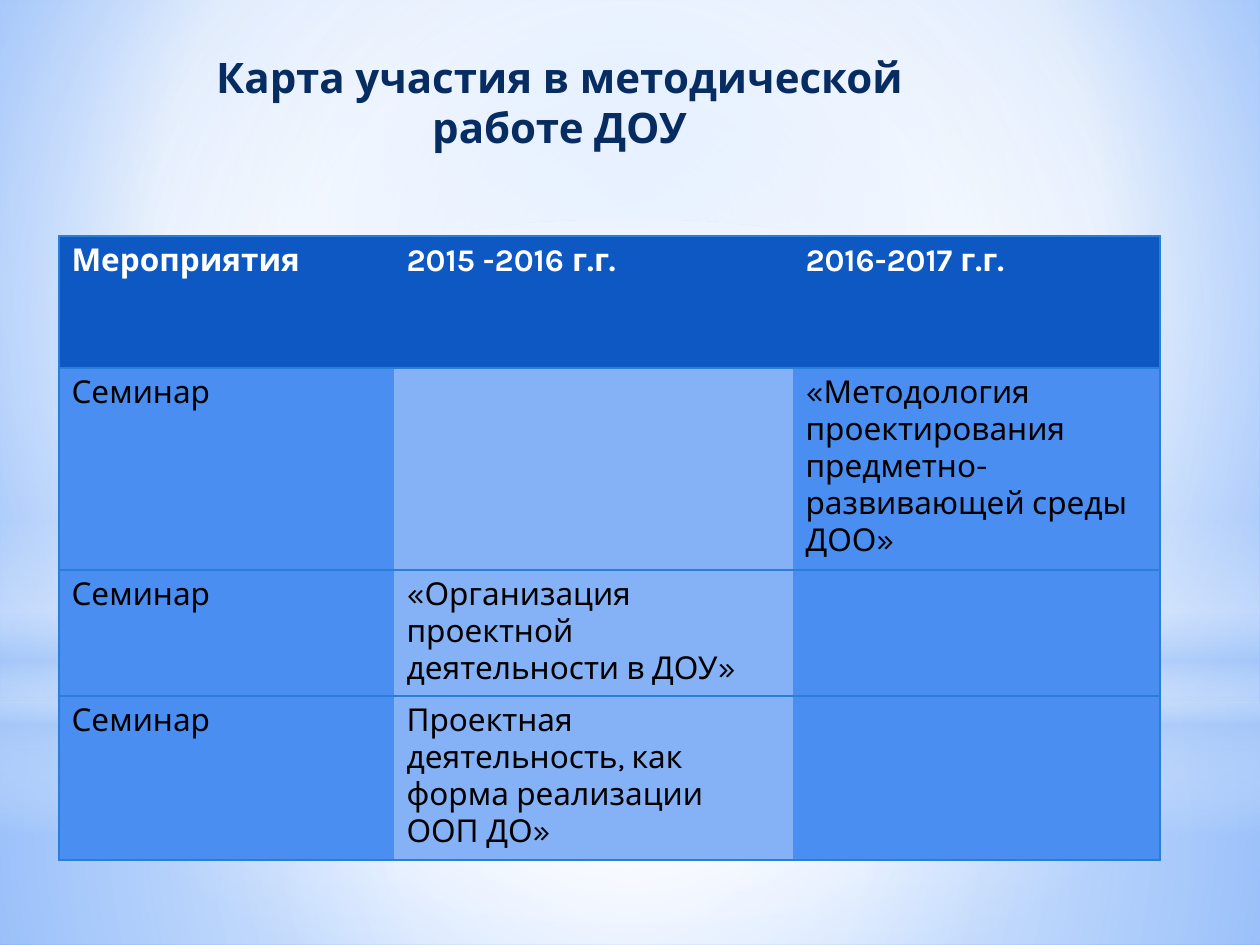
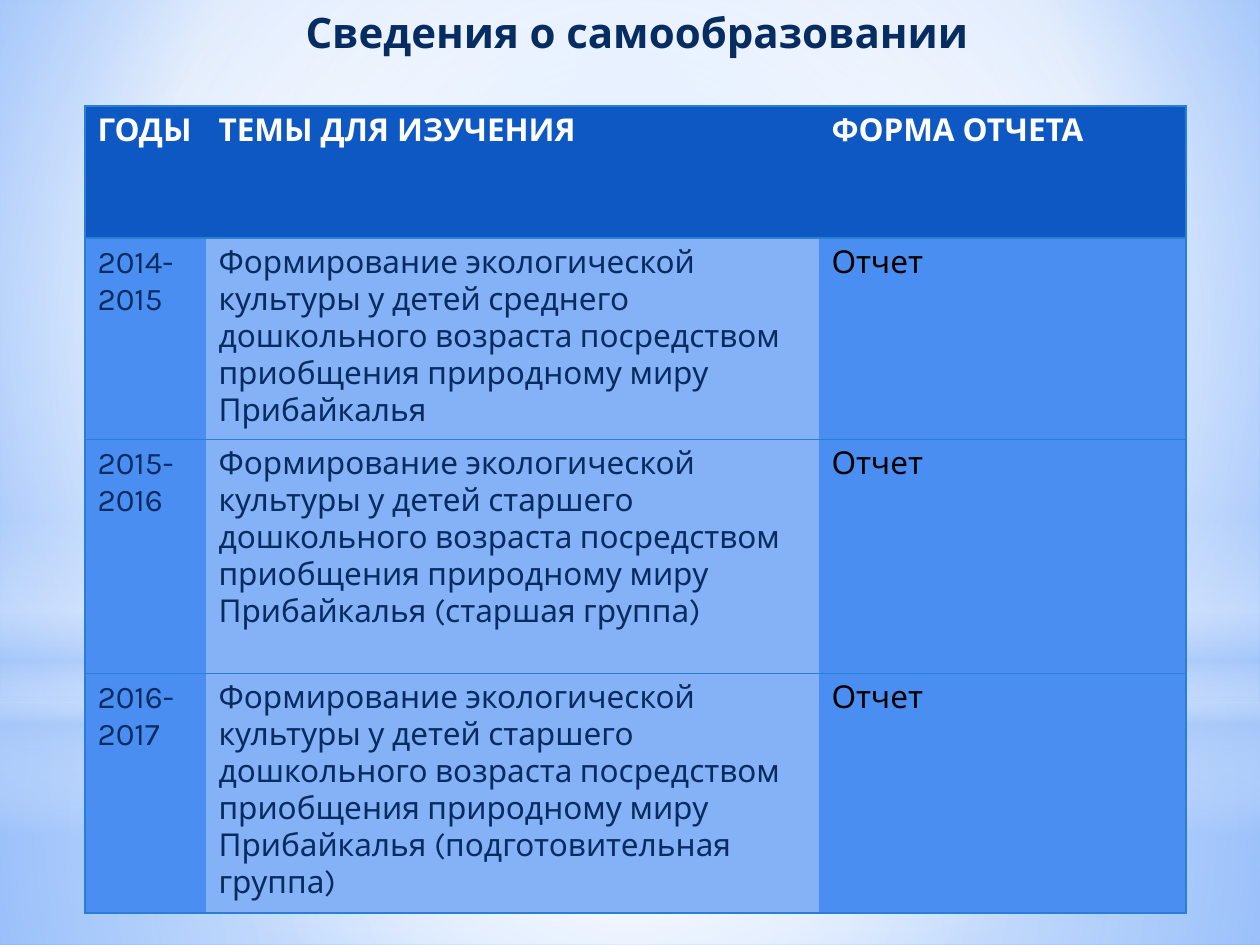
from dataclasses import dataclass

from lxml.etree import SubElement
from pptx import Presentation
from pptx.dml.color import RGBColor
from pptx.enum.shapes import MSO_SHAPE as Preset
from pptx.enum.text import PP_ALIGN as Align
from pptx.oxml import parse_xml
from pptx.oxml.ns import nsdecls, qn
from pptx.util import Emu, Pt


@dataclass(frozen=True)
class Theme:
    font: str = "Karla"
    title_size: int = 24
    cell_size: int = 18
    navy: str = "072C62"
    black: str = "000000"
    white: str = "FFFFFF"
    header: str = "0E58C4"
    blue: str = "4A8EF2"
    light_blue: str = "85B2F6"
    border: str = "297FD5"
    glow: str = "ACCBF9"
    sky: str = "95C0FF"
    deep_sky: str = "5599FF"


THEME = Theme()
EMU_PER_PX = 914400 / 126
WIDTH, HEIGHT = 1260, 945
CENTRE = (50, 50, 50, 50)
BACKGROUND = [(0, THEME.sky, 100), (60, THEME.white, 100), (100, THEME.deep_sky, 100)]
BANDS = [
    (Preset.RECTANGLE, 703, 242, CENTRE,
     [(0, THEME.white, 91), (37, THEME.white, 76), (100, THEME.glow, 79)]),
    (Preset.RECTANGLE, 0, 703, CENTRE,
     [(0, THEME.white, 89), (48, THEME.white, 62), (100, THEME.glow, 79)]),
    (Preset.RECTANGLE, 519, 315, None,
     [(0, THEME.white, 0), (29, THEME.white, 30), (45, THEME.glow, 40),
      (55, THEME.white, 26), (65, THEME.glow, 60), (100, THEME.white, 0)]),
    (Preset.OVAL, 220, 703, CENTRE,
     [(0, THEME.white, 100), (56, THEME.white, 0)]),
]


def px(value):
    return Emu(round(value * EMU_PER_PX))


def set_gradient(owner, stops, focus):
    owner.fill.gradient()
    gradient = owner.element.find(".//" + qn("a:gradFill"))
    for child in list(gradient):
        gradient.remove(child)
    stop_list = SubElement(gradient, qn("a:gsLst"))
    for position, color, alpha in stops:
        stop = SubElement(stop_list, qn("a:gs"), pos=str(position * 1000))
        tint = SubElement(stop, qn("a:srgbClr"), val=color)
        SubElement(tint, qn("a:alpha"), val=str(alpha * 1000))
    if focus:
        path = SubElement(gradient, qn("a:path"), {"path": "circle"})
        edges = {side: str(part * 1000) for side, part in zip("ltrb", focus)}
        SubElement(path, qn("a:fillToRect"), edges)
    else:
        SubElement(gradient, qn("a:lin"), ang="5400000", scaled="0")


@dataclass
class Backdrop:
    fill: object
    element: object


class Deck:
    def __init__(self, theme):
        self.theme = theme
        self.presentation = Presentation()
        self.presentation.slide_width = px(WIDTH)
        self.presentation.slide_height = px(HEIGHT)
        self.slide = None

    def new_slide(self):
        self.slide = self.presentation.slides.add_slide(self.presentation.slide_layouts[6])
        backdrop = Backdrop(self.slide.background.fill, self.slide.element)
        set_gradient(backdrop, BACKGROUND, (20, 10, 20, 60))
        for band in BANDS:
            self.band(*band)

    def band(self, preset, top, height, focus, stops):
        shape = self.slide.shapes.add_shape(preset, 0, px(top), px(WIDTH), px(height))
        shape.shadow.inherit = False
        shape.line.fill.background()
        set_gradient(Backdrop(shape.fill, shape.element), stops, focus)

    def run(self, paragraph, text, size, color, bold):
        run = paragraph.add_run()
        run.text = text
        run.font.name = self.theme.font
        run.font.size = Pt(size)
        run.font.bold = bold
        run.font.color.rgb = RGBColor.from_string(color)

    def title(self, text, left, top, width, height):
        box = self.slide.shapes.add_textbox(px(left), px(top), px(width), px(height))
        box.text_frame.word_wrap = True
        paragraph = box.text_frame.paragraphs[0]
        paragraph.alignment = Align.CENTER
        self.run(paragraph, text, self.theme.title_size, self.theme.navy, True)

    def borders(self, cell, first, last):
        visible = {"L": first, "R": last, "T": True, "B": True}
        properties = cell._tc.get_or_add_tcPr()
        for index, (side, shown) in enumerate(visible.items()):
            paint = (f'<a:solidFill><a:srgbClr val="{self.theme.border}"/></a:solidFill>'
                     if shown else "<a:noFill/>")
            line = f'<a:ln{side} {nsdecls("a")} w="12700">{paint}</a:ln{side}>'
            properties.insert(index, parse_xml(line))

    def table(self, left, top, widths, heights, text_colors, rows):
        frame = self.slide.shapes.add_table(
            len(rows), len(widths), px(left), px(top), px(sum(widths)), px(sum(heights)))
        table = frame.table
        for column, width in zip(table.columns, widths):
            column.width = px(width)
        for row, height in zip(table.rows, heights):
            row.height = px(height)
        fills = (self.theme.blue, self.theme.light_blue, self.theme.blue)
        for row_index, row in enumerate(rows):
            heading = row_index == 0
            for column_index, text in enumerate(row):
                cell = table.cell(row_index, column_index)
                cell.fill.solid()
                fill = self.theme.header if heading else fills[column_index]
                cell.fill.fore_color.rgb = RGBColor.from_string(fill)
                self.borders(cell, column_index == 0, column_index == len(row) - 1)
                if text:
                    color = self.theme.white if heading else text_colors[column_index]
                    self.run(cell.text_frame.paragraphs[0], text,
                             self.theme.cell_size, color, heading)


def participation_slide(deck):
    deck.new_slide()
    deck.title("Карта участия в методической работе ДОУ", 123, 45, 873, 115)
    deck.table(59, 236, (335, 399, 367), (132, 202, 126, 164), (THEME.black,) * 3, [
        ("Мероприятия", "2015 -2016 г.г.", "2016-2017 г.г."),
        ("Семинар", "", "«Методология проектирования предметно-развивающей среды ДОО»"),
        ("Семинар", "«Организация проектной деятельности в ДОУ»", ""),
        ("Семинар", "Проектная деятельность, как форма реализации ООП ДО»", ""),
    ])


def self_education_slide(deck):
    topic = ("Формирование экологической культуры у детей {} дошкольного возраста "
             "посредством приобщения природному миру Прибайкалья{}")
    deck.new_slide()
    deck.title("Сведения о самообразовании", 200, 0, 874, 64)
    deck.table(85, 106, (121, 613, 367), (132, 197, 234, 235),
               (THEME.navy, THEME.navy, THEME.black), [
        ("ГОДЫ", "ТЕМЫ ДЛЯ ИЗУЧЕНИЯ", "ФОРМА ОТЧЕТА"),
        ("2014-2015", topic.format("среднего", ""), "Отчет"),
        ("2015-2016", topic.format("старшего", " (старшая группа)"), "Отчет"),
        ("2016-2017", topic.format("старшего", " (подготовительная группа)"), "Отчет"),
    ])


def main():
    deck = Deck(THEME)
    participation_slide(deck)
    self_education_slide(deck)
    deck.presentation.save("out.pptx")


if __name__ == "__main__":
    main()
